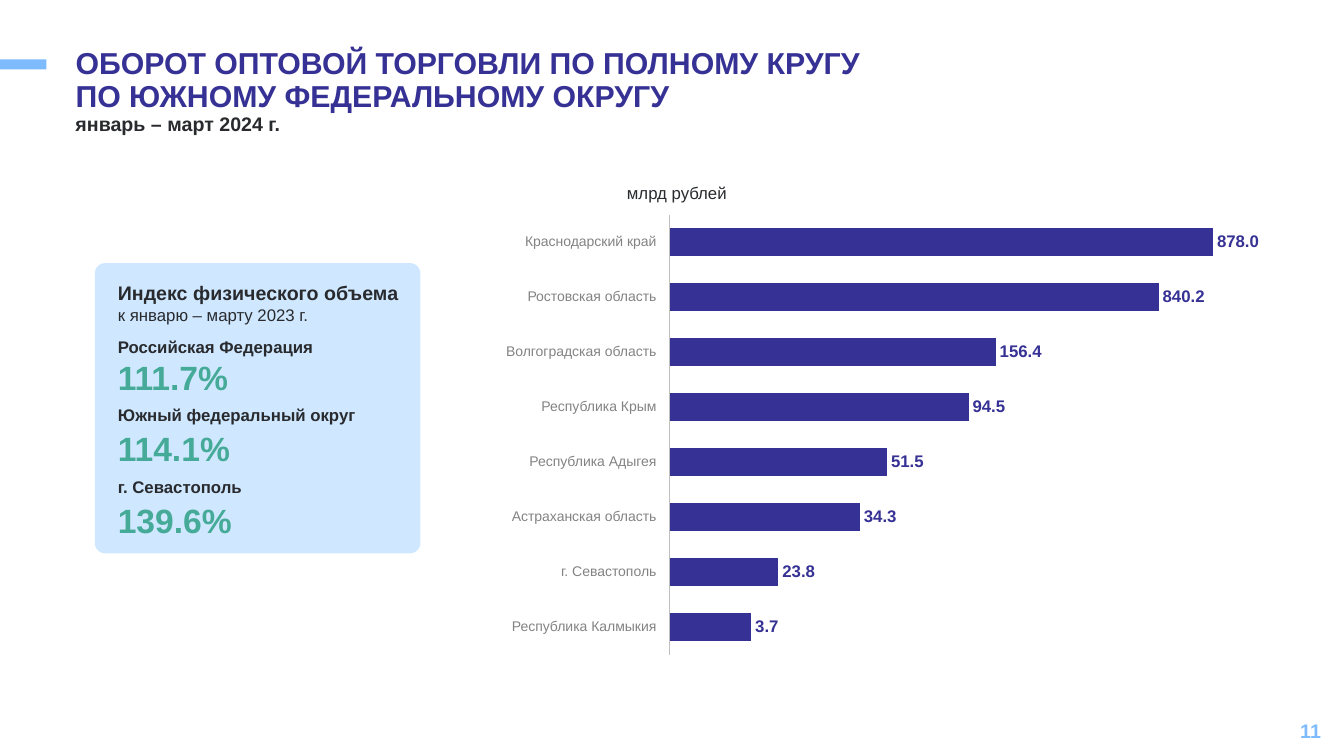
import pptx
import pptx.chart.data
import pptx.dml.color
import pptx.enum.chart
import pptx.enum.shapes
import pptx.enum.text
import pptx.oxml
import pptx.util
from dataclasses import dataclass

TITLE = ("ОБОРОТ ОПТОВОЙ ТОРГОВЛИ ПО ПОЛНОМУ КРУГУ ", "ПО ЮЖНОМУ ФЕДЕРАЛЬНОМУ ОКРУГУ")
PERIOD = "январь – март 2024 г."
UNIT = "млрд рублей"
PAGE_NUMBER = "11"
INDEX_HEADING = "Индекс физического объема"
INDEX_BASE = "к январю – марту 2023 г."
INDEXES = [
    ("Российская Федерация", "111.7%", 3.29, 3.49),
    ("Южный федеральный округ", "114.1%", 3.97, 4.2),
    ("г. Севастополь", "139.6%", 4.68, 4.91),
]
REGIONS = [
    ("Краснодарский край", 500, "878.0"),
    ("Ростовская область", 450, "840.2"),
    ("Волгоградская область", 300, "156.4"),
    ("Республика Крым", 275, "94.5"),
    ("Республика Адыгея", 200, "51.5"),
    ("Астраханская область", 175, "34.3"),
    ("г. Севастополь", 100, "23.8"),
    ("Республика Калмыкия", 75, "3.7"),
]
PLOT = {"x": 0.049, "y": 0.034, "w": 0.951, "h": 0.931}


@dataclass(frozen=True)
class Theme:
    font: str = "Arial"
    navy: str = "363194"
    sky: str = "7DBBFC"
    panel: str = "CFE8FF"
    ink: str = "282A2E"
    grey: str = "838383"
    green: str = "46AA98"
    axis: str = "BFBFBF"
    title: float = 21.6
    heading: float = 14
    text: float = 12
    small: float = 10
    figure: float = 24
    chart: float = 18


theme = Theme()
Inches = pptx.util.Inches
Anchor = pptx.enum.text.MSO_ANCHOR
Align = pptx.enum.text.PP_ALIGN
Preset = pptx.enum.shapes.MSO_SHAPE
OUTSIDE_END = pptx.enum.chart.XL_LABEL_POSITION.OUTSIDE_END


def rgb(value):
    return pptx.dml.color.RGBColor.from_string(value)


def apply(target, values):
    for name, value in values.items():
        setattr(target, name, value)


def style(font, size, color, bold=False):
    apply(font, {"name": theme.font, "size": pptx.util.Pt(size), "bold": bold})
    font.color.rgb = rgb(color)


def write(para, text, *look):
    span = para.add_run()
    span.text = text
    style(span.font, *look)


def add_text(page, at, text, *look, frame=None, layout=None):
    box = page.shapes.add_textbox(*map(Inches, at))
    apply(box.text_frame, {"word_wrap": True, **(frame or {})})
    para = box.text_frame.paragraphs[0]
    apply(para, layout or {})
    write(para, text, *look)
    return para


def add_block(page, preset, at, color):
    block = page.shapes.add_shape(preset, *map(Inches, at))
    block.shadow.inherit = False
    block.fill.solid()
    block.fill.fore_color.rgb = rgb(color)
    block.line.fill.background()
    return block


def add_header(page):
    add_block(page, Preset.RECTANGLE, (0, 0.59, 0.46, 0.1), theme.sky)
    add_text(page, (10.2, 7.05, 3, 0.4), PAGE_NUMBER, theme.heading, theme.sky, True,
             frame={"vertical_anchor": Anchor.MIDDLE}, layout={"alignment": Align.RIGHT})
    title = page.shapes.title
    apply(title, dict(zip(("left", "top", "width", "height"), map(Inches, (0.65, 0.43, 10.41, 0.57)))))
    apply(title.text_frame, {"vertical_anchor": Anchor.TOP, "word_wrap": True,
                             "auto_size": pptx.enum.text.MSO_AUTO_SIZE.NONE})
    para = title.text_frame.paragraphs[0]
    apply(para, {"alignment": Align.LEFT, "line_spacing": 0.9})
    for number, line in enumerate(TITLE):
        if number:
            para.add_line_break()
        write(para, line, theme.title, theme.navy, True)
    add_text(page, (0.65, 1.09, 10.41, 0.44), PERIOD, theme.heading, theme.ink, True,
             layout={"line_spacing": 0.9})


def add_index_panel(page):
    panel = add_block(page, Preset.ROUNDED_RECTANGLE, (0.94, 2.61, 3.23, 2.88), theme.panel)
    panel.adjustments[0] = 0.036
    left = 1.07
    para = add_text(page, (left, 2.74, 4.35, 0.54), INDEX_HEADING, theme.heading, theme.ink, True)
    para.add_line_break()
    write(para, INDEX_BASE, theme.text, theme.ink)
    for name, figure, name_top, figure_top in INDEXES:
        add_text(page, (left, name_top, 3.2, 0.3), name, theme.text, theme.ink, True)
        add_text(page, (left, figure_top, 2, 0.5), figure, theme.figure, theme.green, True)


def add_turnover_chart(page):
    bars = REGIONS[::-1]
    data = pptx.chart.data.CategoryChartData()
    data.categories = [str(number + 1) for number in range(len(bars))]
    data.add_series("Series 1", [length for _, length, _ in bars])
    chart = page.shapes.add_chart(pptx.enum.chart.XL_CHART_TYPE.BAR_CLUSTERED,
                                  *map(Inches, (6.31, 1.97, 6.8, 4.69)), data).chart
    apply(chart, {"has_legend": False, "has_title": False})
    style(chart.font, theme.chart, theme.ink)
    apply(chart.value_axis, {"visible": False, "has_major_gridlines": False,
                             "minimum_scale": 0, "maximum_scale": 600})
    apply(chart.category_axis, {
        "tick_label_position": pptx.enum.chart.XL_TICK_LABEL_POSITION.NONE,
        "major_tick_mark": pptx.enum.chart.XL_TICK_MARK.NONE,
        "minor_tick_mark": pptx.enum.chart.XL_TICK_MARK.NONE,
    })
    line = chart.category_axis.format.line
    line.color.rgb = rgb(theme.axis)
    line.width = pptx.util.Pt(1)
    plot = chart.plots[0]
    apply(plot, {"gap_width": 100, "overlap": 9, "vary_by_categories": False})
    series = plot.series[0]
    series.format.fill.solid()
    series.format.fill.fore_color.rgb = rgb(theme.navy)
    apply(series.data_labels, {"show_value": True, "position": OUTSIDE_END})
    style(series.data_labels.font, theme.text, theme.sky, True)
    for number, (_, _, turnover) in enumerate(bars):
        label = series.points[number].data_label
        write(label.text_frame.paragraphs[0], turnover, theme.text, theme.navy, True)
        label.position = OUTSIDE_END

    area = plot._element.getparent()
    for old in area.findall(pptx.oxml.ns.qn("c:layout")):
        area.remove(old)
    modes = "".join(f'<c:{side}Mode val="edge"/>' for side in "xy")
    sizes = "".join(f'<c:{side} val="{share}"/>' for side, share in PLOT.items())
    area.insert(0, pptx.oxml.parse_xml(
        f'<c:layout {pptx.oxml.ns.nsdecls("c")}><c:manualLayout>'
        f'<c:layoutTarget val="inner"/>{modes}{sizes}</c:manualLayout></c:layout>'))


def add_region_names(page):
    first, last, right, width = 2.31, 6.13, 6.51, 2.25
    step = (last - first) / (len(REGIONS) - 1)
    margins = {f"margin_{side}": 0 for side in ("left", "top", "right", "bottom")}
    for row, (name, _, _) in enumerate(REGIONS):
        add_text(page, (right - width, first + row * step, width, 0.18), name,
                 theme.small, theme.grey, frame=margins, layout={"alignment": Align.RIGHT})
    add_text(page, (6.12, 1.76, 1.2, 0.3), UNIT, theme.text, theme.ink, frame={"word_wrap": False})


def main():
    deck = pptx.Presentation()
    apply(deck, {"slide_width": Inches(13.33), "slide_height": Inches(7.5)})
    page = deck.slides.add_slide(deck.slide_layouts[5])
    add_header(page)
    add_index_panel(page)
    add_turnover_chart(page)
    add_region_names(page)
    deck.save("out.pptx")


if __name__ == "__main__":
    main()
